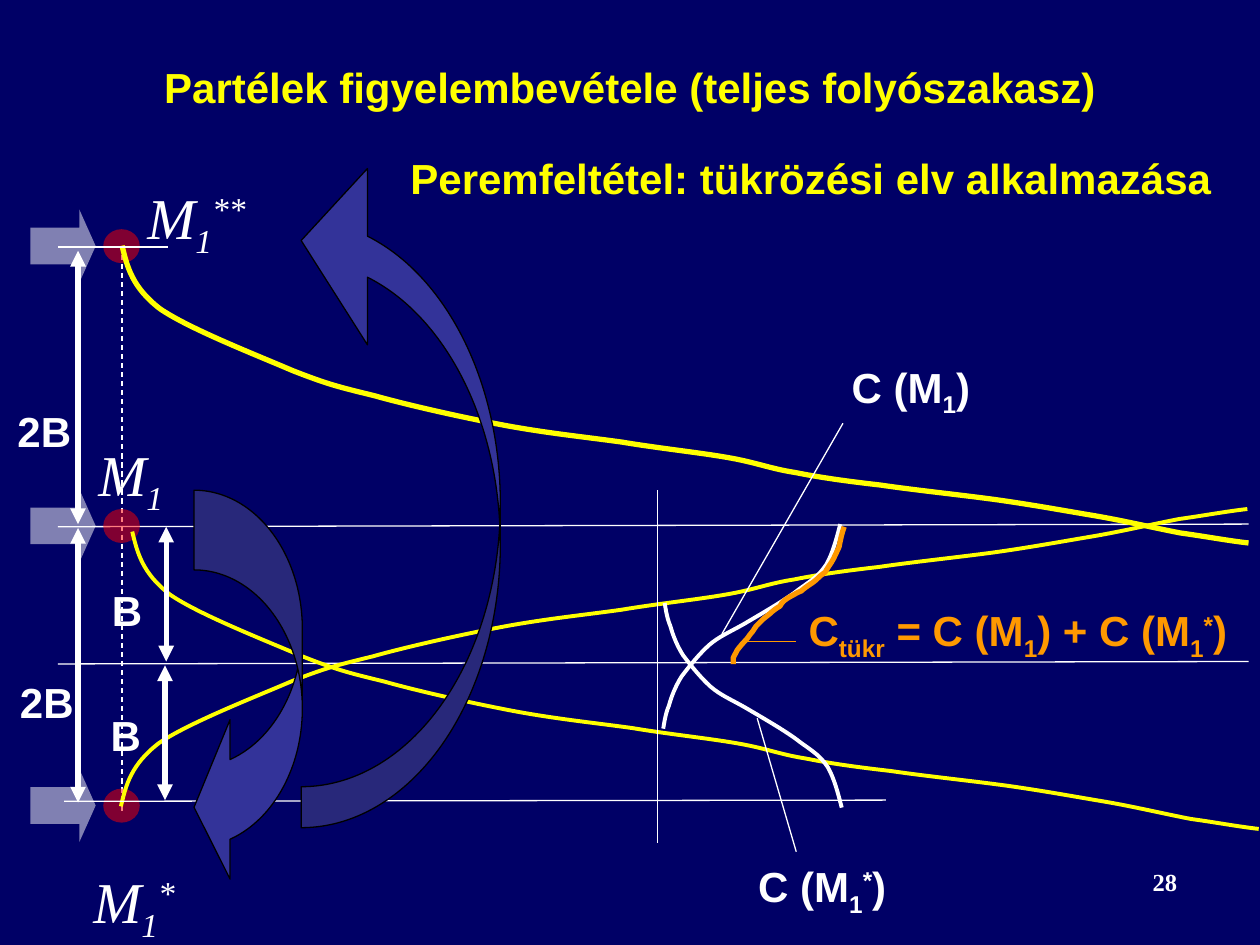
from typing import NamedTuple

import pptx
import pptx.dml.color
import pptx.enum.dml
import pptx.enum.shapes
import pptx.enum.text
import pptx.oxml
import pptx.oxml.ns
import pptx.util

Pt = pptx.util.Pt
qn = pptx.oxml.ns.qn
SHAPES = pptx.enum.shapes.MSO_SHAPE
ALIGN = pptx.enum.text.PP_ALIGN

COLORS = {"background": "000066", "heading": "FFFF00", "white": "FFFFFF",
          "source": "FF0000", "mirror": "333399", "outline": "000000",
          "sum": "FF9900"}
SUB, SUP = -25000, 30000

# Curves: offsets in points from the start, three per Bezier segment
PLUME = [
    (2.9, 12.2), (5.8, 23.8), (21.6, 36), (38.2, 47.5), (77, 62.6), (97.2, 71.3),
    (117.4, 79.2), (123.1, 80.6), (144, 85.7), (164.2, 91.4), (196.6, 98.6), (220.3, 103),
    (244.1, 107.3), (265, 109.4), (285.8, 112.3), (307.4, 115.9), (329, 118.1), (345.6, 121),
    (362.2, 123.8), (370.1, 127.4), (384.5, 129.6), (398.9, 132.5), (414, 134.6), (433.4, 136.8),
    (452.9, 139.7), (481, 142.6), (501.1, 145.4), (521.3, 148.3), (537.1, 151.2), (554.4, 154.1),
    (571.7, 157), (589.7, 161.3), (604.8, 164.2), (619.9, 166.3), (631.4, 168.5), (643.7, 169.9)]
PROFILE = [
    (-2.2, 8.6), (-4.3, 16.6), (-7.9, 23), (-12.2, 29.5), (-15.8, 31.7), (-23.8, 37.4),
    (-31, 43.2), (-46.1, 51.8), (-54.7, 56.9), (-63.4, 61.9), (-69.1, 64.1), (-74.9, 69.1),
    (-80.6, 74.2), (-86.4, 81.4), (-90.7, 87.1), (-94.3, 92.9), (-96.5, 98.6), (-97.9, 103.7),
    (-100.1, 108.7), (-100.8, 115.2), (-101.2, 116.9)]
SUM_PROFILE = [
    (-1.4, 3.6), (-2.2, 7.9), (-2.9, 11.5), (-4.3, 14.4), (-5.8, 18), (-7.2, 20.2),
    (-8.6, 22.3), (-10.1, 24.5), (-10.8, 25.9), (-12.2, 27.4), (-12.2, 27.4), (-13.7, 28.1),
    (-15.1, 29.5), (-16.6, 31), (-18.7, 32.4), (-20.9, 33.8), (-23, 35.3), (-24.5, 36.7),
    (-26.6, 37.4), (-28.8, 38.9), (-30.2, 39.6), (-31.7, 40.3), (-33.8, 41.8), (-34.6, 42.5),
    (-36, 43.2), (-35.3, 43.9), (-36.7, 45.4), (-38.2, 46.1), (-41, 48.2), (-42.5, 49.7),
    (-43.9, 51.1), (-44.6, 51.1), (-46.1, 52.6), (-47.5, 54), (-49, 55.4), (-50.4, 56.9),
    (-51.8, 59), (-52.6, 60.5), (-54, 61.9), (-55.4, 64.1), (-56.9, 65.5), (-58.3, 67),
    (-59, 68.4), (-60.5, 69.1), (-61.2, 70.6), (-61.9, 72), (-62.6, 73.4), (-63.4, 74.9),
    (-63.4, 75.6), (-63.4, 77), (-63.4, 78.5)]


class Line(NamedTuple):
    start: tuple[float, float]
    end: tuple[float, float]
    width: float = 0.75
    color: str = "white"
    dashed: bool = False
    arrows: bool = False


class Curve(NamedTuple):
    start: tuple[float, float]
    offsets: list[tuple[float, float]]
    color: str
    width: float
    direction: int = 1


class Label(NamedTuple):
    box: tuple[float, float, float, float]
    runs: list[tuple[str, int]]
    style: dict = {}


def rgb(name: str) -> pptx.dml.color.RGBColor:
    return pptx.dml.color.RGBColor.from_string(COLORS[name])


def write_text(frame, runs, *, size=24, font="Arial", color="white", bold=True,
               italic=False, align=ALIGN.LEFT, wrap=True, inset=None) -> None:
    frame.word_wrap = wrap
    frame.auto_size = pptx.enum.text.MSO_AUTO_SIZE.NONE
    frame.vertical_anchor = pptx.enum.text.MSO_ANCHOR.TOP
    if inset is not None:
        frame.margin_left = frame.margin_right = Pt(inset)
        frame.margin_top = frame.margin_bottom = Pt(inset)
    paragraph = frame.paragraphs[0]
    paragraph.alignment = align
    for text, baseline in runs:
        run = paragraph.add_run()
        run.text = text
        run.font.size, run.font.name = Pt(size), font
        run.font.bold, run.font.italic = bold, italic
        run.font.color.rgb = rgb(color)
        if baseline:
            run.font._element.set("baseline", str(baseline))


def add_label(slide, label: Label) -> None:
    box = slide.shapes.add_textbox(*map(Pt, label.box))
    write_text(box.text_frame, label.runs, **label.style)


def add_line(slide, line: Line) -> None:
    connector = slide.shapes.add_connector(
        pptx.enum.shapes.MSO_CONNECTOR.STRAIGHT, *map(Pt, line.start + line.end))
    connector.line.color.rgb = rgb(line.color)
    connector.line.width = Pt(line.width)
    if line.dashed:
        connector.line.dash_style = pptx.enum.dml.MSO_LINE.DASH
    if line.arrows:
        outline = connector.line._get_or_add_ln()
        for tag in ("a:headEnd", "a:tailEnd"):
            end = pptx.oxml.ns.qn(tag)
            outline.append(outline.makeelement(end, {"type": "triangle"}))
    properties = connector._element.spPr
    properties.append(properties.makeelement(qn("a:effectLst"), {}))


def add_curve(slide, curve: Curve) -> None:
    x, y = curve.start
    builder = slide.shapes.build_freeform(Pt(x), Pt(y))
    builder.add_line_segments(
        [(Pt(x + dx), Pt(y + curve.direction * dy)) for dx, dy in curve.offsets], close=False)
    shape = builder.convert_to_shape()
    shape.shadow.inherit = False
    shape.fill.background()
    shape.line.color.rgb = rgb(curve.color)
    shape.line.width = Pt(curve.width)
    # Join each three straight steps into one Bezier segment
    steps = shape._element.xpath(".//a:lnTo")
    for first in range(0, len(steps), 3):
        bezier = steps[first].makeelement(qn("a:cubicBezTo"), {})
        steps[first].addprevious(bezier)
        for step in steps[first:first + 3]:
            bezier.append(step[0])
            step.getparent().remove(step)


def add_preset(slide, kind, box, color, *, adjustments=(), alpha=None,
               outlined=False, flipped=False) -> None:
    shape = slide.shapes.add_shape(kind, *map(Pt, box))
    shape.shadow.inherit = False
    for index, value in enumerate(adjustments):
        shape.adjustments[index] = value
    shape.fill.solid()
    shape.fill.fore_color.rgb = rgb(color)
    if alpha is not None:
        fill = shape._element.xpath("./p:spPr/a:solidFill/a:srgbClr")[0]
        fill.append(fill.makeelement(qn("a:alpha"), {"val": str(alpha * 1000)}))
    if outlined:
        shape.line.color.rgb = rgb("outline")
        shape.line.width = Pt(0.75)
    else:
        shape.line.fill.background()
    if flipped:
        shape._element.xpath("./p:spPr/a:xfrm")[0].set("flipV", "1")


def main() -> None:
    deck = pptx.Presentation()
    deck.slide_width, deck.slide_height = Pt(720), Pt(540)
    slide = deck.slides.add_slide(deck.slide_layouts[5])
    slide.background.fill.solid()
    slide.background.fill.fore_color.rgb = rgb("background")

    # Title
    title = slide.shapes.title
    title.left, title.top, title.width, title.height = map(Pt, (0, 31.7, 720, 36))
    write_text(title.text_frame, [("Partélek figyelembevétele (teljes folyószakasz)", 0)],
               color="heading", align=ALIGN.CENTER)

    # River axis, bank and the line joining the sources
    for line in (Line((33.1, 301), (713.5, 299.5)), Line((33.1, 379.4), (713.5, 378)),
                 Line((69.8, 140.4), (69.8, 464.4), dashed=True)):
        add_line(slide, line)

    # Real source and its two mirror images
    for y in (131, 290.9, 450.7):
        add_preset(slide, SHAPES.OVAL, (59, y, 20.9, 19.4), "source", alpha=50)
        add_preset(slide, SHAPES.RIGHT_ARROW, (17.3, y - 11.3, 37.4, 41.8), "white",
                   adjustments=(0.5, 0.25), alpha=50)

    # Plume edges
    for curve in (Curve((75.6, 303.8), PLUME, "heading", 2.25),
                  Curve((69.1, 460.8), PLUME, "heading", 2.25, -1),
                  Curve((69.8, 140.4), PLUME, "heading", 3)):
        add_curve(slide, curve)

    # Distances and mirror axes
    for x, top, bottom in ((95, 301, 378), (94.3, 380.2, 457.2),
                           (44.6, 301.7, 458.6), (44.6, 143.3, 299.5)):
        add_line(slide, Line((x, top), (x, bottom), width=3, arrows=True))
    add_line(slide, Line((33.1, 141.1), (95.8, 141.1)))
    add_line(slide, Line((36.7, 457.9), (506.2, 457.2)))

    # Mirroring arrows
    add_preset(slide, SHAPES.CURVED_LEFT_ARROW, (110.9, 280.1, 61.9, 226.8), "mirror",
               adjustments=(0.736, 1.472, 0.333), outlined=True)
    add_preset(slide, SHAPES.CURVED_LEFT_ARROW, (172.1, 87.1, 113.8, 385.9), "mirror",
               adjustments=(0.206, 0.885, 0.333), outlined=True, flipped=True)

    # Concentration profiles with their leaders
    add_line(slide, Line((375.8, 280.1), (375.8, 481.7)))
    for curve in (Curve((480.2, 299.5), PROFILE, "white", 2.25),
                  Curve((481, 461.5), PROFILE, "white", 2.25, -1),
                  Curve((482.4, 301), SUM_PROFILE, "sum", 3)):
        add_curve(slide, curve)
    for line in (Line((412.6, 362.2), (481.7, 241.9)), Line((455, 486.7), (432.7, 410.4)),
                 Line((426.2, 366.5), (455, 366.5), color="sum")):
        add_line(slide, line)

    # Labels
    symbol = dict(size=33, font="Times New Roman", bold=False, italic=True, wrap=False, inset=0)
    mass = [("M", 0), ("1", SUB)]
    real = [("C (M", 0), ("1", SUB)]
    for label in (
            Label((227.5, 83.5, 489.6, 36), [("Peremfeltétel: tükrözési elv alkalmazása", 0)],
                  {"color": "heading"}),
            Label((56.9, 330.5, 31, 36), [("B", 0)]),
            Label((56.2, 401.8, 31, 36), [("B", 0)]),
            Label((4.3, 383, 51.1, 36), [("2B", 0)]),
            Label((2.9, 228.2, 51.1, 36), [("2B", 0)]),
            Label((56.2, 250.6, 38.2, 39.6), mass, symbol),
            Label((53.3, 494.6, 49.7, 39.6), mass + [("*", SUP)], symbol),
            Label((84.2, 103.7, 60.5, 39.6), mass + [("**", SUP)], symbol),
            Label((479.5, 203, 92.2, 36), real + [(")", 0)]),
            Label((426.2, 488.2, 92.2, 36), real + [("*", SUP), (")", 0)]),
            Label((455, 342, 271.4, 36),
                  [("C", 0), ("tükr", SUB), (" = C (M", 0), ("1", SUB), (") + C (M", 0),
                   ("1", SUB), ("*", SUP), (")", 0)], {"color": "sum"}),
            Label((529.9, 491.8, 149.8, 36), [("28", 0)],
                  {"size": 14, "font": "Times New Roman", "align": ALIGN.RIGHT})):
        add_label(slide, label)

    deck.save("out.pptx")


if __name__ == "__main__":
    main()
